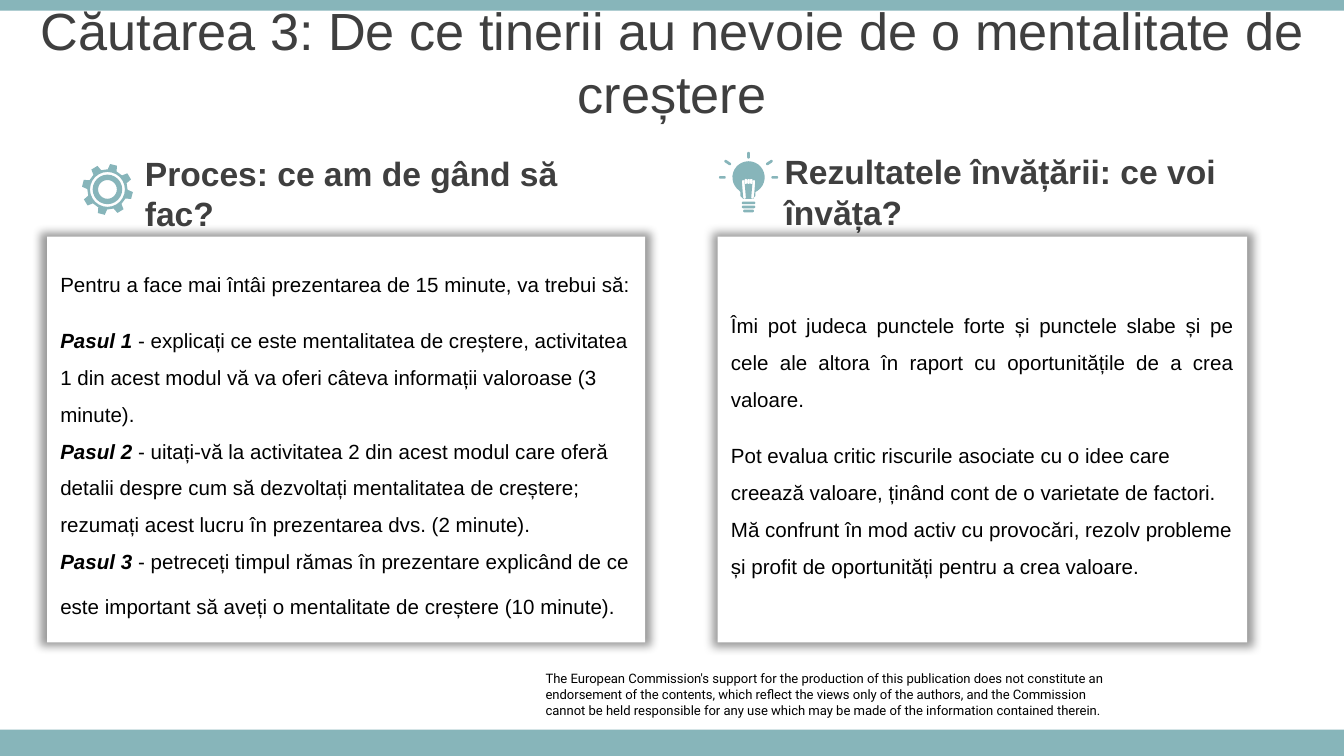
from math import atan2, cos, degrees, radians, sin

from lxml import etree
from pptx import Presentation
from pptx.dml.color import RGBColor
from pptx.enum.shapes import MSO_SHAPE as SHAPE
from pptx.enum.text import MSO_ANCHOR as ANCHOR, PP_ALIGN as ALIGN
from pptx.oxml.ns import qn
from pptx.util import Inches, Pt

COLORS = {"teal": "87B5BA", "white": "FFFFFF", "black": "000000", "heading": "3F3F3F"}


def style(item, color, size=None, name="Arial", bold=False, italic=False):
    if size is None:
        item.fill.solid()
        item.fill.fore_color.rgb = RGBColor.from_string(COLORS[color])
        item.line.fill.background()
        item.shadow.inherit = False
        return
    f = item.font
    f.name, f.size, f.bold, f.italic = name, Pt(size), bold, italic
    f.color.rgb = RGBColor.from_string(COLORS[color])


def arc(cx, cy, radius, start=0, end=360, steps=24):
    angles = [radians(start + (end - start) * i / steps) for i in range(steps + 1)]
    return [(cx + radius * cos(a), cy + radius * sin(a)) for a in angles]


prs = Presentation()
prs.slide_width, prs.slide_height = Inches(10), Inches(10) * 9 // 16
s = prs.slides.add_slide(prs.slide_layouts[6])

labels = [
    (4.06, 4.99, 4.17, 0.35, [
        "The European Commission's support for the production of this publication does not constitute an "
        "endorsement of the contents, which reflect the views only of the authors, and the Commission",
        "cannot be held responsible for any use which may be made of the information contained therein.",
    ], 7, "Roboto", "black", False, ALIGN.LEFT),
    (0, 0.14, 10, 0.63, ["Căutarea 3: De ce tinerii au nevoie de o mentalitate de creștere"],
     28, "Arial", "heading", False, ALIGN.CENTER),
    (0.98, 1.28, 3.56, 0.31, ["Proces: ce am de gând să fac?"],
     18, "Arial", "heading", True, ALIGN.LEFT),
    (5.74, 1.27, 3.56, 0.31, ["Rezultatele învățării: ce voi învăța?"],
     18, "Arial", "heading", True, ALIGN.LEFT),
]
for x, y, w, h, lines, size, font, color, bold, align in labels:
    tf = s.shapes.add_textbox(Inches(x), Inches(y), Inches(w), Inches(h)).text_frame
    tf.word_wrap = True
    if font == "Roboto":
        tf.margin_left = tf.margin_right = tf.margin_top = tf.margin_bottom = 0
    else:
        tf.vertical_anchor = ANCHOR.MIDDLE
    tf.text = "\n".join(lines)
    for p in tf.paragraphs:
        p.alignment = align
        style(p.runs[0], color, size, font, bold)

for y, h in [(5.43, 0.2), (0, 0.08)]:
    bar = s.shapes.add_shape(SHAPE.RECTANGLE, 0, Inches(y), Inches(10), Inches(h))
    style(bar, "teal")

gear_x, gear_y = 0.8, 1.41
teeth = []
for tooth in range(8):
    middle = 45 * tooth - 76
    for offset, radius in [(-13, 0.15), (-8, 0.19), (8, 0.19), (13, 0.15)]:
        teeth += arc(gear_x, gear_y, radius, middle + offset, middle + offset, 1)[:1]
gear = [teeth] + [arc(gear_x, gear_y, radius) for radius in (0.13, 0.11, 0.07)]

bulb_x = 5.57
bulb = [arc(bulb_x, 1.32, 0.12, 125, 415)
        + [(5.62, 1.43), (5.62, 1.46), (5.6, 1.48), (5.53, 1.48), (5.51, 1.46), (5.51, 1.43)]]
strokes = [(bulb_x - half, y, bulb_x + half, y, 0.01)
           for half, y in [(0.04, 1.51), (0.04, 1.54), (0.03, 1.57)]]
strokes.append((bulb_x, 1.14, bulb_x, 1.17, 0.01))
for side in (-1, 1):
    strokes += [
        (bulb_x + side * 0.18, 1.32, bulb_x + side * 0.21, 1.32, 0.01),
        (bulb_x + side * 0.14, 1.22, bulb_x + side * 0.17, 1.2, 0.01),
        (bulb_x + side * 0.04, 1.35, bulb_x + side * 0.03, 1.47, 0.01),
    ]
strokes += [(bulb_x + dx, 1.34, bulb_x + dx, 1.36, 0.01) for dx in (-0.02, 0, 0.02)]
for x1, y1, x2, y2, radius in strokes:
    angle = degrees(atan2(y2 - y1, x2 - x1))
    bulb.append(arc(x1, y1, radius, angle + 90, angle + 270, 8)
                + arc(x2, y2, radius, angle - 90, angle + 90, 8))

for contours in (gear, bulb):
    outlines = [[(Inches(x), Inches(y)) for x, y in contour] for contour in contours]
    builder = s.shapes.build_freeform(*outlines[0][0])
    builder.add_line_segments(outlines[0][1:])
    for outline in outlines[1:]:
        builder.move_to(*outline[0])
        builder.add_line_segments(outline[1:])
    style(builder.convert_to_shape(), "teal")

panels = [
    (0.35, 4.45, ALIGN.LEFT, [
        ("", "Pentru a face mai întâi prezentarea de 15 minute, va trebui să:"),
        ("Pasul 1 ", "- explicați ce este mentalitatea de creștere, activitatea 1 din acest modul "
                     "vă va oferi câteva informații valoroase (3 minute)."),
        ("Pasul 2 ", "- uitați-vă la activitatea 2 din acest modul care oferă detalii despre cum să "
                     "dezvoltați mentalitatea de creștere; rezumați acest lucru în prezentarea dvs. (2 minute)."),
        ("Pasul 3 ", "- petreceți timpul rămas în prezentare explicând de ce este important să aveți "
                     "o mentalitate de creștere (10 minute)."),
    ]),
    (5.34, 3.94, ALIGN.JUSTIFY, [
        ("", "Îmi pot judeca punctele forte și punctele slabe și pe cele ale altora în raport cu "
             "oportunitățile de a crea valoare."),
        ("", "Pot evalua critic riscurile asociate cu o idee care creează valoare, ținând cont de "
             "o varietate de factori."),
        ("", "Mă confrunt în mod activ cu provocări, rezolv probleme și profit de oportunități "
             "pentru a crea valoare."),
    ]),
]
for x, w, first_align, items in panels:
    sp = s.shapes.add_shape(SHAPE.RECTANGLE, Inches(x), Inches(1.76), Inches(w), Inches(3.02))
    style(sp, "white")
    effects = sp._element.spPr.find(qn("a:effectLst"))
    shadow = etree.SubElement(effects, qn("a:outerShdw"), blurRad=str(Pt(5)), dist="0",
                              sx="102000", sy="102000", algn="ctr", rotWithShape="0")
    shade = etree.SubElement(shadow, qn("a:srgbClr"), val=COLORS["black"])
    etree.SubElement(shade, qn("a:alpha"), val="40000")
    tf = sp.text_frame
    tf.word_wrap = True
    tf.vertical_anchor = ANCHOR.MIDDLE
    for i, (lead, body) in enumerate(items):
        p = tf.paragraphs[0] if i == 0 else tf.add_paragraph()
        p.alignment = first_align if i == 0 else ALIGN.LEFT
        p.line_spacing = 1.5
        if i == 1:
            p.space_before = Pt(10)
        for text, strong in [(lead, True), (body, False)]:
            if text:
                r = p.add_run()
                r.text = text
                style(r, "black", 11, bold=strong, italic=strong)
    if items[-1][0]:
        p.space_after = Pt(10)
        r = p.add_run()
        r.text = " "
        style(r, "heading", 13.5)

prs.save("out.pptx")
